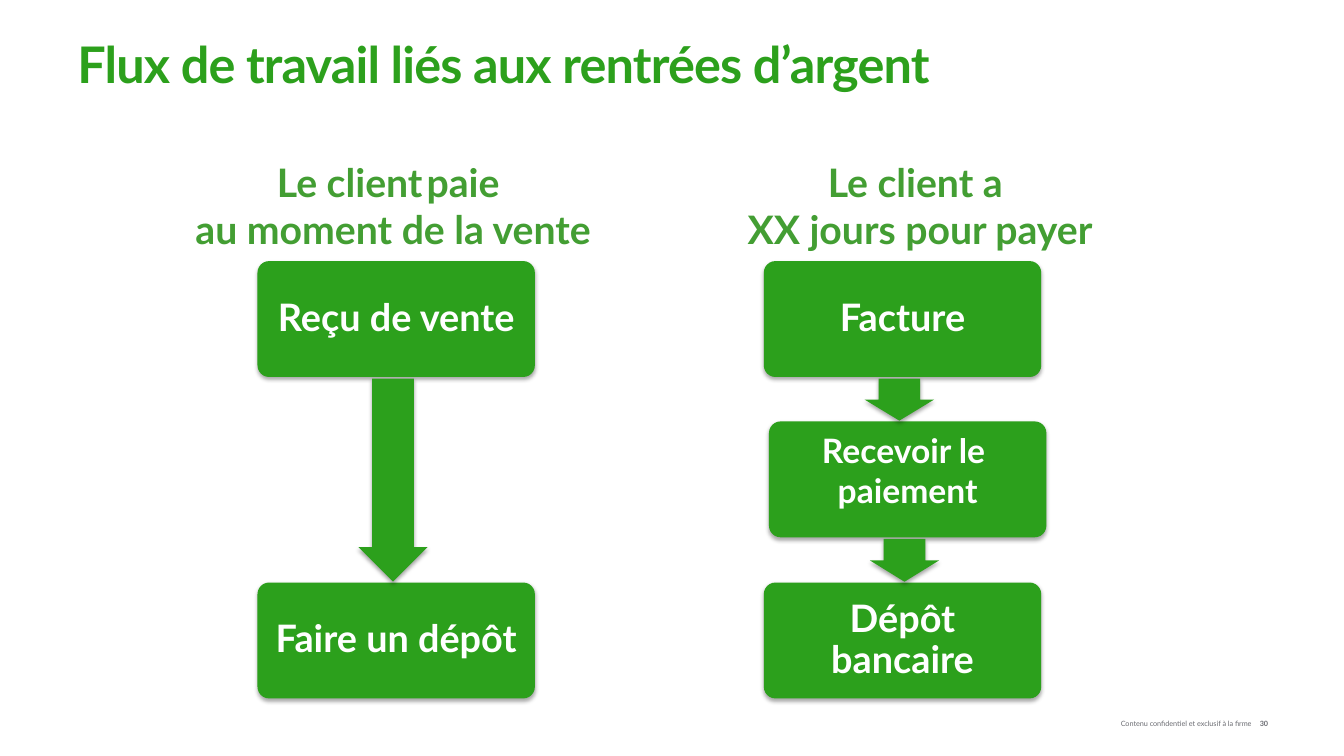
from dataclasses import dataclass

from lxml.etree import SubElement
from pptx import Presentation
from pptx.dml.color import RGBColor
from pptx.enum.shapes import MSO_SHAPE
from pptx.enum.text import MSO_ANCHOR, PP_ALIGN
from pptx.oxml.ns import qn
from pptx.shapes.autoshape import Shape
from pptx.slide import Slide
from pptx.text.text import TextFrame, _Paragraph, _Run
from pptx.util import Cm, Pt

GREEN = RGBColor(0x2C, 0xA0, 0x1C)
HEADING_GREEN = RGBColor(0x43, 0x9E, 0x33)
WHITE = RGBColor(0xFF, 0xFF, 0xFF)
GREY = RGBColor(0x6B, 0x6C, 0x72)

STEP_WIDTH, STEP_HEIGHT = 6.99, 2.92
ARROW_WIDTH = 1.75
ARROW_SHIFT = -0.08
ARROW_GAP = 0.04


@dataclass(frozen=True)
class Step:
    lines: tuple[str, ...]
    left: float
    top: float
    size: float = 27
    line_spacing: float = 0.9
    anchor: MSO_ANCHOR = MSO_ANCHOR.MIDDLE
    inset: float = 0.29


@dataclass(frozen=True)
class Workflow:
    heading: tuple[tuple[str, float], ...]
    heading_left: float
    heading_width: float
    steps: tuple[Step, ...]


WORKFLOWS = (
    Workflow(
        (("Le client", 28), (" ", 12), ("paie \vau moment de la vente", 28)),
        3.68, 12.45,
        (
            Step(("Reçu de vente",), 6.49, 6.58),
            Step(("Faire un dépôt",), 6.49, 14.68),
        ),
    ),
    Workflow(
        (("Le client a \vXX\u00a0jours pour payer", 28),),
        17.09, 12.19,
        (
            Step(("Facture",), 19.25, 6.58),
            Step(("Recevoir le ", "paiement"), 19.38, 10.62, 24, 1.0,
                 MSO_ANCHOR.TOP, 0.25),
            Step(("Dépôt bancaire",), 19.25, 14.68),
        ),
    ),
)


def add_run(paragraph: _Paragraph, text: str, size: float, color: RGBColor,
            bold: bool = True) -> _Run:
    """Add a run; a vertical tab in the text becomes a line break."""
    first, *others = text.split("\v")
    run = paragraph.add_run()
    run.text = first
    run.font.name = "Lato"
    run.font.size = Pt(size)
    run.font.bold = bold
    run.font.color.rgb = color
    for line in others:
        paragraph.add_line_break()
        add_run(paragraph, line, size, color, bold)
    return run


def add_text_frame(slide: Slide, left: float, top: float, width: float,
                   height: float, side_inset: float,
                   anchor: MSO_ANCHOR = MSO_ANCHOR.MIDDLE) -> TextFrame:
    box = slide.shapes.add_textbox(Cm(left), Cm(top), Cm(width), Cm(height))
    frame = box.text_frame
    frame.word_wrap = True
    frame.vertical_anchor = anchor
    frame.margin_left = frame.margin_right = Cm(side_inset)
    return frame


def style_green(shape: Shape) -> None:
    """Fill the shape green, without outline, over a soft downward shadow."""
    shape.fill.solid()
    shape.fill.fore_color.rgb = GREEN
    shape.line.fill.background()
    shape.shadow.inherit = False
    effects = shape._element.spPr.find(qn("a:effectLst"))
    shadow = SubElement(effects, qn("a:outerShdw"), blurRad=str(Pt(3.1)),
                        dist=str(Pt(1.8)), dir="5400000", rotWithShape="0")
    black = SubElement(shadow, qn("a:srgbClr"), val="000000")
    SubElement(black, qn("a:alpha"), val="35000")


def add_step(slide: Slide, step: Step) -> None:
    box = slide.shapes.add_shape(MSO_SHAPE.ROUNDED_RECTANGLE, Cm(step.left),
                                 Cm(step.top), Cm(STEP_WIDTH), Cm(STEP_HEIGHT))
    box.adjustments[0] = 0.1
    style_green(box)
    frame = box.text_frame
    frame.word_wrap = True
    frame.vertical_anchor = step.anchor
    frame.margin_left = frame.margin_right = Cm(step.inset)
    for index, line in enumerate(step.lines):
        paragraph = frame.add_paragraph() if index else frame.paragraphs[0]
        paragraph.alignment = PP_ALIGN.CENTER
        paragraph.line_spacing = step.line_spacing
        add_run(paragraph, line, step.size, WHITE)


def add_arrow(slide: Slide, upper: Step, lower: Step) -> None:
    top = upper.top + STEP_HEIGHT + ARROW_GAP
    left = upper.left + (STEP_WIDTH - ARROW_WIDTH) / 2 + ARROW_SHIFT
    arrow = slide.shapes.add_shape(MSO_SHAPE.DOWN_ARROW, Cm(left), Cm(top),
                                   Cm(ARROW_WIDTH),
                                   Cm(lower.top - ARROW_GAP / 2 - top))
    arrow.adjustments[0] = 0.6
    arrow.adjustments[1] = 0.5
    style_green(arrow)


def add_workflow(slide: Slide, workflow: Workflow) -> None:
    frame = add_text_frame(slide, workflow.heading_left, 3.86,
                           workflow.heading_width, 2.54, 0, MSO_ANCHOR.TOP)
    heading = frame.paragraphs[0]
    heading.alignment = PP_ALIGN.CENTER
    for text, size in workflow.heading:
        add_run(heading, text, size, HEADING_GREEN)
    for step in workflow.steps:
        add_step(slide, step)
    for upper, lower in zip(workflow.steps, workflow.steps[1:]):
        add_arrow(slide, upper, lower)


def add_title(slide: Slide) -> None:
    title = add_text_frame(slide, 1.7, 0.91, 30.78, 1.52, 0.25).paragraphs[0]
    title.line_spacing = 0.95
    run = add_run(title, "Flux de travail liés aux rentrées d’argent", 36, GREEN)
    run.font._element.set("spc", "-60")


def add_footer(slide: Slide) -> None:
    notice = add_text_frame(slide, 24.77, 17.98, 6.78, 0.51, 0).paragraphs[0]
    notice.alignment = PP_ALIGN.RIGHT
    add_run(notice, "Contenu confidentiel et exclusif à la firme", 5.2, GREY, False)
    number = add_text_frame(slide, 31.57, 17.98, 0.99, 0.51, 0.18).paragraphs[0]
    add_run(number, "30", 5.2, GREY)


def main() -> None:
    presentation = Presentation()
    presentation.slide_width = Cm(33.87)
    presentation.slide_height = Cm(19.05)
    slide = presentation.slides.add_slide(presentation.slide_layouts[6])
    add_title(slide)
    for workflow in WORKFLOWS:
        add_workflow(slide, workflow)
    add_footer(slide)
    presentation.save("out.pptx")


if __name__ == "__main__":
    main()
